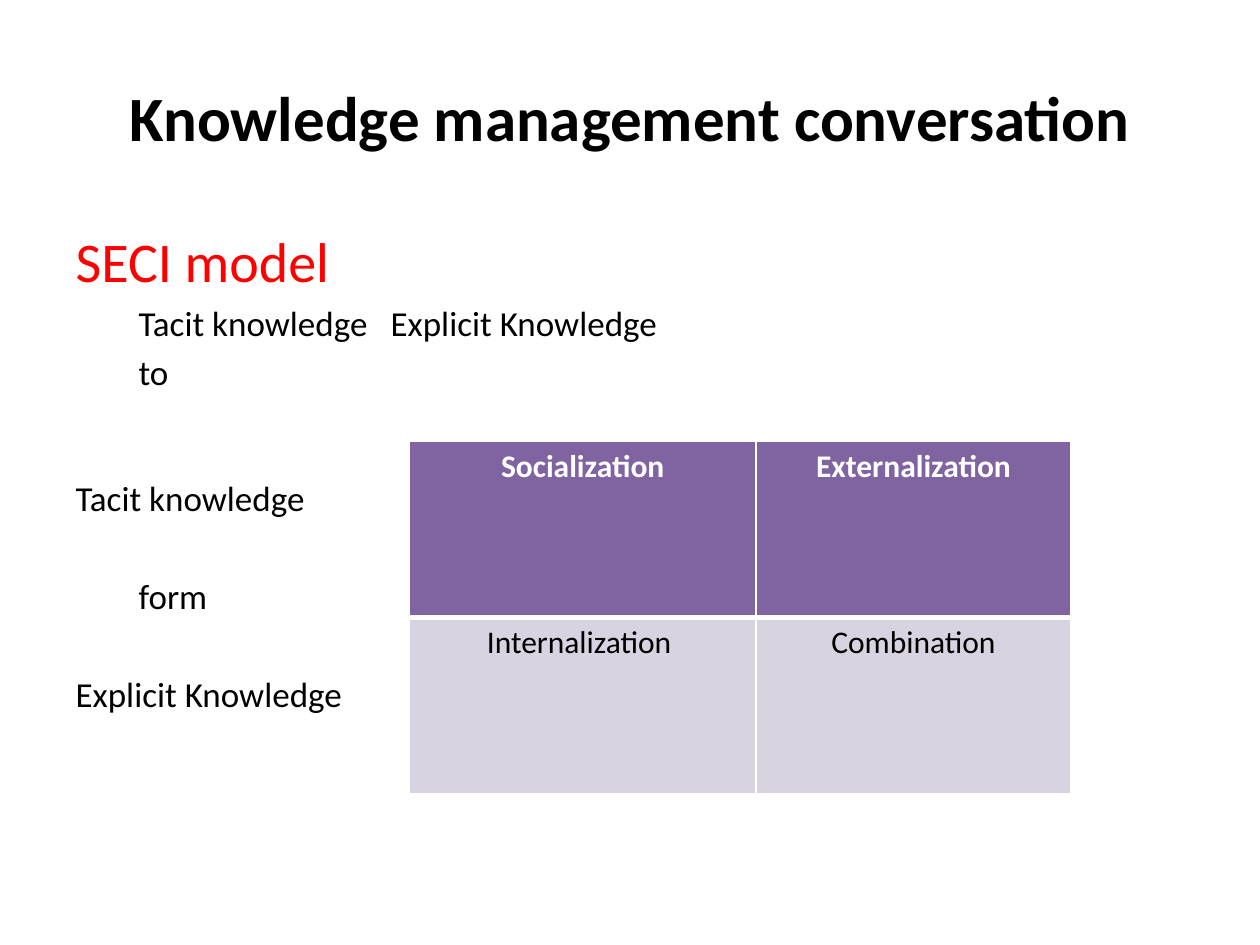
from lxml import etree
from pptx import Presentation
from pptx.dml.color import RGBColor
from pptx.enum.text import MSO_ANCHOR, PP_ALIGN
from pptx.oxml.ns import qn
from pptx.util import Inches, Pt

CENTER, LEFT = PP_ALIGN.CENTER, PP_ALIGN.LEFT
MIDDLE = MSO_ANCHOR.MIDDLE
FONT = "Calibri"
BLACK, WHITE, RED = "000000", "FFFFFF", "FF0000"
PURPLE, LILAC = "8064A2", "D8D3E0"

# text, size, colour, space before in points, tab stops in inches
BODY_LINES = [
    ("SECI model", 32, RED, 6.4, []),
    ("\tTacit knowledge\tExplicit Knowledge", 20, BLACK, 4, [2.07, 5.53]),
    ("\tto", 20, BLACK, 4, [4.58]),
    ("Tacit knowledge", 20, BLACK, 48.5, []),
    ("\tform", 20, BLACK, 32, [2]),
    ("Explicit Knowledge", 20, BLACK, 32, []),
]
# labels, fill, text colour, bold, top and bottom border widths
MATRIX_ROWS = [
    (["Socialization", "Externalization"], PURPLE, WHITE, True, 1, 3),
    (["Internalization ", "Combination"], LILAC, BLACK, False, 3, 1),
]


def color(value):
    return RGBColor.from_string(value)


def add_span(para, text, size, shade, bold=False):
    span = para.add_run()
    span.text = text
    font = span.font
    font.name, font.size, font.bold = FONT, Pt(size), bold
    font.color.rgb = color(shade)


def set_tabs(para, stops):
    """Remove the bullet and indent, then set left tab stops."""
    props = para._p.get_or_add_pPr()
    props.set("marL", "0")
    props.set("indent", "0")
    etree.SubElement(props, qn("a:buNone"))
    if stops:
        tabs = etree.SubElement(props, qn("a:tabLst"))
        for stop in stops:
            etree.SubElement(tabs, qn("a:tab"), pos=str(Inches(stop)), algn="l")


def set_borders(cell, widths):
    """Draw white borders; widths are left, right, top, bottom in points."""
    props = cell._tc.get_or_add_tcPr()
    for place, (side, width) in enumerate(zip("LRTB", widths)):
        line = etree.Element(qn(f"a:ln{side}"), w=str(Pt(width)))
        fill = etree.SubElement(line, qn("a:solidFill"))
        etree.SubElement(fill, qn("a:srgbClr"), val=WHITE)
        props.insert(place, line)


def place(box, left, top, width, height):
    box.left, box.top = Inches(left), Inches(top)
    box.width, box.height = Inches(width), Inches(height)


def fill_title(box, text):
    place(box, 0.5, 0.3, 9, 1.25)
    box.text_frame.vertical_anchor = MIDDLE
    para = box.text_frame.paragraphs[0]
    para.alignment = CENTER
    add_span(para, text, 36, BLACK, bold=True)


def fill_body(box, lines):
    place(box, 0.5, 1.75, 9, 4.95)
    frame = box.text_frame
    for number, (text, size, shade, space, stops) in enumerate(lines):
        para = frame.add_paragraph() if number else frame.paragraphs[0]
        para.alignment = LEFT
        para.space_before = Pt(space)
        set_tabs(para, stops)
        add_span(para, text, size, shade)


def add_matrix(page, left, top, column_widths, row_height):
    table = page.shapes.add_table(
        len(MATRIX_ROWS), len(column_widths), Inches(left), Inches(top),
        Inches(sum(column_widths)), Inches(row_height * len(MATRIX_ROWS))).table
    for column, width in zip(table.columns, column_widths):
        column.width = Inches(width)
    for row, (labels, fill, shade, bold, above, below) in zip(table.rows, MATRIX_ROWS):
        row.height = Inches(row_height)
        for cell, label in zip(row.cells, labels):
            cell.fill.solid()
            cell.fill.fore_color.rgb = color(fill)
            set_borders(cell, (1, 1, above, below))
            para = cell.text_frame.paragraphs[0]
            para.alignment = CENTER
            add_span(para, label, 18, shade, bold)


def main():
    deck = Presentation()
    deck.slide_width, deck.slide_height = Inches(10), Inches(7.5)
    page = deck.slides.add_slide(deck.slide_layouts[1])
    fill_title(page.shapes.title, "Knowledge management conversation")
    fill_body(page.placeholders[1], BODY_LINES)
    add_matrix(page, 3.25, 3.5, [2.75, 2.5], 1.4)
    deck.save("out.pptx")


if __name__ == "__main__":
    main()
